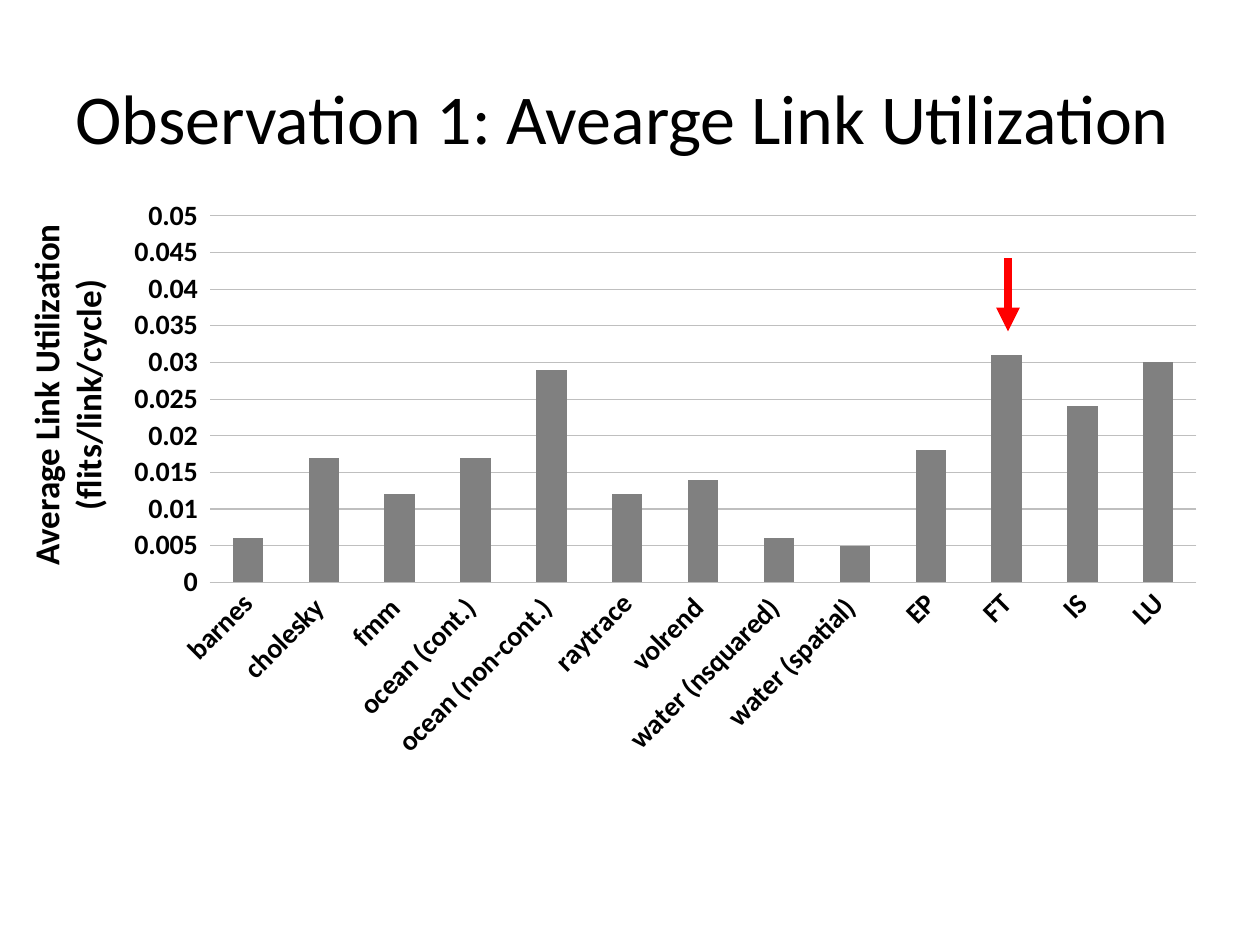
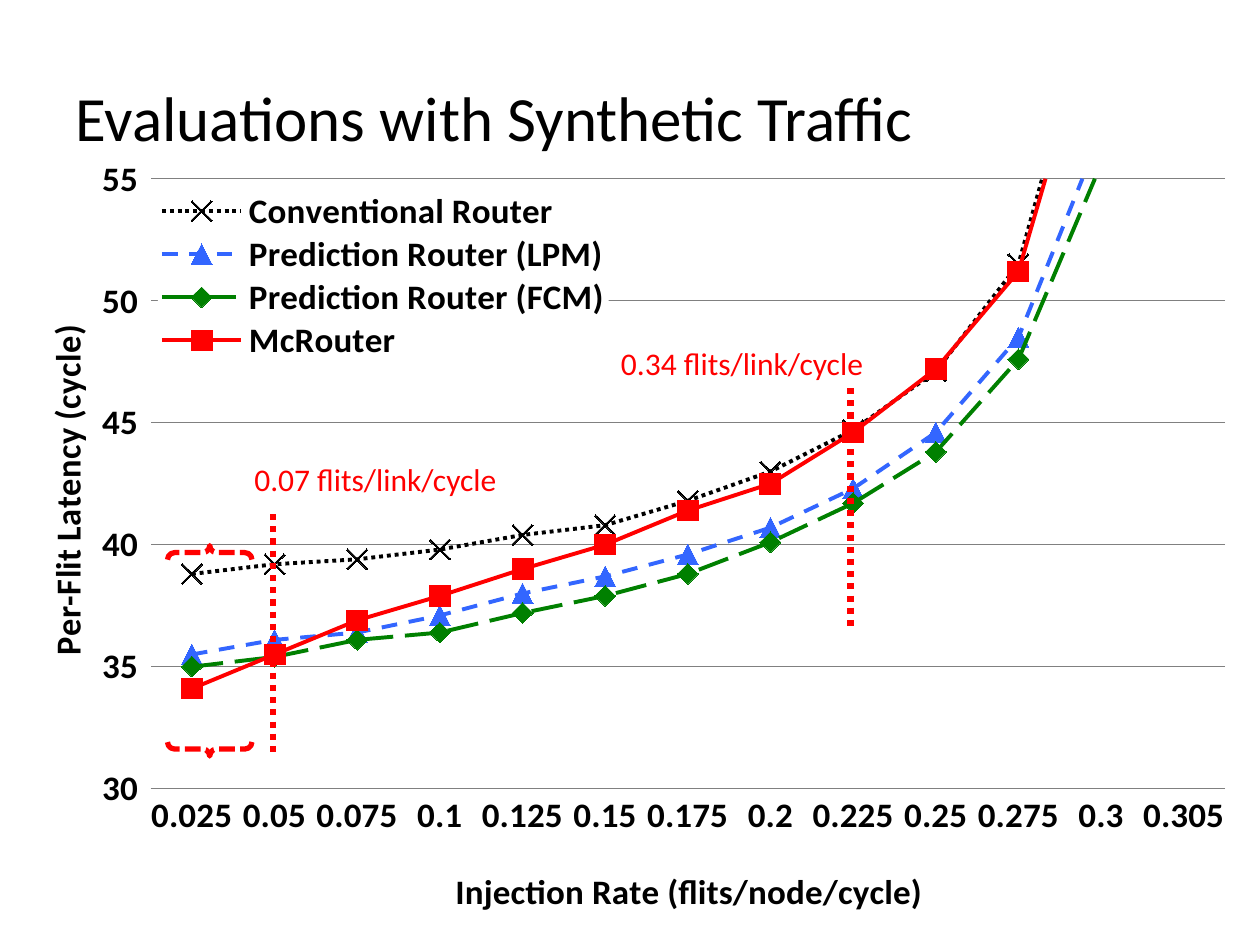
"""Build two slides: link utilization bars and synthetic traffic latency lines."""
from lxml import etree
from pptx import Presentation
from pptx import util as u
from pptx.chart.data import CategoryChartData
from pptx.dml.color import RGBColor
from pptx.enum import chart as ch, dml, shapes, text
from pptx.oxml import parse_xml
from pptx.oxml.ns import nsdecls, qn

FACE = "Calibri"
BLACK = RGBColor(0, 0, 0)
WHITE = RGBColor(255, 255, 255)
RED = RGBColor(255, 0, 0)
BLUE = RGBColor(0x33, 0x66, 0xFF)
GREEN = RGBColor(0, 0x80, 0)
GRAY = RGBColor(0x80, 0x80, 0x80)
PALE = RGBColor(0xBF, 0xBF, 0xBF)
DASH, MARK = dml.MSO_LINE, ch.XL_MARKER_STYLE

LOADS = [
    ("barnes", 0.006), ("cholesky ", 0.017), ("fmm ", 0.012),
    ("ocean (cont.) ", 0.017), ("ocean (non-cont.) ", 0.029),
    ("raytrace", 0.012), ("volrend ", 0.014), ("water (nsquared) ", 0.006),
    ("water (spatial) ", 0.005), ("EP", 0.018), ("FT", 0.031),
    ("IS", 0.024), ("LU", 0.03),
]
RATES = [0.025, 0.05, 0.075, 0.1, 0.125, 0.15, 0.175,
         0.2, 0.225, 0.25, 0.275, 0.3, 0.305]
LINES = [
    ("Conventional Router", BLACK, DASH.ROUND_DOT, MARK.X,
     (38.8, 39.2, 39.4, 39.8, 40.4, 40.8, 41.8, 43, 44.7, 47.1, 51.5, 63.7, 69.2)),
    ("Prediction Router (LPM)", BLUE, DASH.DASH, MARK.TRIANGLE,
     (35.5, 36.1, 36.4, 37.1, 38, 38.7, 39.6, 40.7, 42.3, 44.6, 48.5, 56.9, 62.9)),
    ("Prediction Router (FCM)", GREEN, DASH.LONG_DASH, MARK.DIAMOND,
     (35, 35.4, 36.1, 36.4, 37.2, 37.9, 38.8, 40.1, 41.7, 43.8, 47.6, 55.6, 59.7)),
    ("McRouter", RED, DASH.SOLID, MARK.SQUARE,
     (34.1, 35.5, 36.9, 37.9, 39, 40, 41.4, 42.5, 44.6, 47.2, 51.2, 62.8, 71.3)),
]
NOTES = [("0.07 flits/link/cycle", 1.92, 3.6, 2.17, 4.08),
         ("0.34 flits/link/cycle", 4.83, 2.68, 6.75, 3.08)]
RUN = 1.92


def inches(*nums):
    return [u.Inches(n) for n in nums]


def style(font, size, color=BLACK, bold=False):
    font.name, font.size, font.bold = FACE, u.Pt(size), bold
    font.color.rgb = color


def label(slide, words, spot, size, color=BLACK, bold=False, wrap=True,
          align=text.PP_ALIGN.LEFT, anchor=text.MSO_ANCHOR.TOP):
    box = slide.shapes.add_textbox(*inches(*spot))
    frame = box.text_frame
    frame.word_wrap, frame.vertical_anchor = wrap, anchor
    para = frame.paragraphs[0]
    para.text, para.alignment = words, align
    style(para.font, size, color, bold)
    return box


def title(slide, words, size):
    label(slide, words, (0.5, 0.3, 9, 1.25), size, anchor=text.MSO_ANCHOR.MIDDLE)


def line(slide, x, top, end, width, dash=None):
    link = slide.shapes.add_connector(
        shapes.MSO_CONNECTOR.STRAIGHT, *inches(x, top, x, end))
    link.line.color.rgb, link.line.width = RED, u.Pt(width)
    if dash:
        link.line.dash_style = dash
    etree.SubElement(link._element.spPr, qn("a:effectLst"))
    return link


def place(node, index, *spot, inner=False):
    for old in node.findall(qn("c:layout")):
        node.remove(old)
    vals = [("layoutTarget", "inner")] if inner else []
    vals += [("xMode", "edge"), ("yMode", "edge"), *zip("xywh", spot)]
    body = "".join(f'<c:{tag} val="{val}"/>' for tag, val in vals)
    node.insert(index, parse_xml(
        f'<c:layout {nsdecls("c")}><c:manualLayout>{body}'
        '</c:manualLayout></c:layout>'))


def graph(slide, kind, cats, rows, spot, plot, size, scale, tint):
    data = CategoryChartData()
    data.categories = cats
    for name, vals in rows:
        data.add_series(name, vals)
    chart = slide.shapes.add_chart(kind, *inches(*spot), data).chart
    chart.has_title = chart.has_legend = False
    style(chart.font, 10)
    place(chart._chartSpace.chart.plotArea, 0, *plot, inner=True)
    cat, val = chart.category_axis, chart.value_axis
    for axis in (cat, val):
        style(axis.tick_labels.font, size, bold=True)
        axis.tick_labels.number_format = "General"
        axis.tick_labels.number_format_is_linked = False
    cat.major_tick_mark = ch.XL_TICK_MARK.NONE
    val.minimum_scale, val.maximum_scale, val.major_unit = scale
    val.format.line.fill.background()
    val.has_major_gridlines = True
    for rule in (cat.format.line, val.major_gridlines.format.line):
        rule.color.rgb, rule.width = tint, u.Pt(0.75)
    chart.plots[0].vary_by_categories = False
    return chart


def turn(body, angle):
    body.set("rot", str(angle * 60000))
    body.set("vert", "horz")


def name_axis(axis, words, angle, *spot):
    head = axis.axis_title
    frame = head.text_frame
    frame.text = words
    style(frame.paragraphs[0].font, 20, bold=True)
    turn(frame._txBody.bodyPr, angle)
    place(head._element, 1, *spot)


def add_key(chart):
    chart.has_legend = True
    key = chart.legend
    key.position = ch.XL_LEGEND_POSITION.CORNER
    key.include_in_layout = True
    style(key.font, 20, bold=True)
    place(key._element, 1, 0.112, 0.04, 0.37, 0.23)
    key._element.find(qn("c:txPr")).addprevious(parse_xml(
        f'<c:spPr {nsdecls("c", "a")}><a:solidFill><a:srgbClr val="{WHITE}"/>'
        '</a:solidFill></c:spPr>'))


def draw_loads(slide):
    title(slide, "Observation 1: Avearge Link Utilization", 40)
    cats, vals = zip(*LOADS)
    chart = graph(slide, ch.XL_CHART_TYPE.COLUMN_CLUSTERED, cats,
                  [("Series 1", vals)], (0.92, 1.55, 8.58, 4.95),
                  (0.087, 0.033, 0.913, 0.588), 16, (0, 0.05, 0.005), PALE)
    turn(chart.category_axis._element.txPr.bodyPr, -45)
    plot = chart.plots[0]
    plot.gap_width = 150
    fill = plot.series[0].format.fill
    fill.solid()
    fill.fore_color.rgb = GRAY
    box = label(slide, "Average Link Utilization (flits/link/cycle)",
                (-0.97, 2.75, 3, 0.77), 20, bold=True, align=text.PP_ALIGN.CENTER)
    box.rotation = 270
    arrow = line(slide, 8, 2.05, 2.63, 4.5)
    etree.SubElement(arrow.line._get_or_add_ln(), qn("a:tailEnd"), type="triangle")


def draw_delay(slide):
    chart = graph(slide, ch.XL_CHART_TYPE.LINE_MARKERS, RATES,
                  [(row[0], row[-1]) for row in LINES], (0.17, 1.25, 9.67, 6.08),
                  (0.106, 0.026, 0.882, 0.811), 20, (30, 55, 5), GRAY)
    name_axis(chart.category_axis, "Injection Rate (flits/node/cycle)", 0, 0.351, 0.932)
    name_axis(chart.value_axis, "Per-Flit Latency (cycle)", -90, 0.012, 0.22)
    add_key(chart)
    for row, (_, color, dash, mark, _) in zip(chart.plots[0].series, LINES):
        row.smooth = False
        pen = row.format.line
        pen.color.rgb, pen.width, pen.dash_style = color, u.Pt(2.25), dash
        row.marker.style, row.marker.size = mark, 12
        look = row.marker.format
        look.fill.solid()
        look.fill.fore_color.rgb = look.line.color.rgb = color
    title(slide, "Evaluations with Synthetic Traffic", 36)
    for words, left, top, x, start in NOTES:
        line(slide, x, start, start + RUN, 3.5, DASH.ROUND_DOT)
        label(slide, words, (left, top, 2.15, 0.4), 18, RED, wrap=False)
    brace = slide.shapes.add_shape(
        shapes.MSO_SHAPE.DOUBLE_BRACE, *inches(0.83, 4.83, 1.67, 0.67))
    brace.rotation, brace.shadow.inherit = 270, False
    brace.fill.background()
    brace.line.color.rgb, brace.line.width = RED, u.Pt(3)
    brace.line.dash_style = DASH.SQUARE_DOT


def main():
    deck = Presentation()
    deck.slide_width, deck.slide_height = inches(10, 7.5)
    for draw in (draw_loads, draw_delay):
        draw(deck.slides.add_slide(deck.slide_layouts[6]))
    deck.save("out.pptx")


if __name__ == "__main__":
    main()
